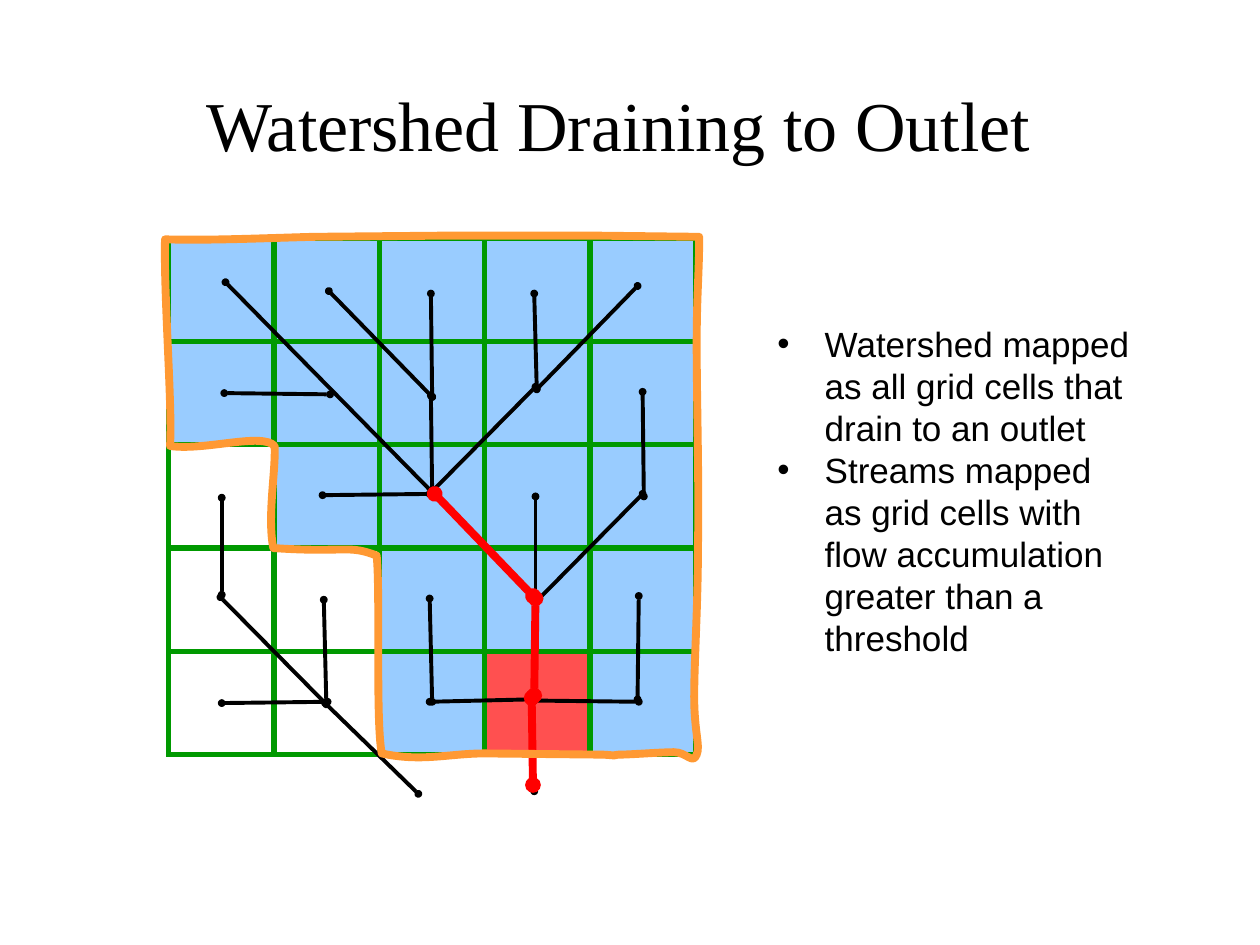
import pptx
import pptx.dml.color
import pptx.enum.shapes
import pptx.enum.text
import pptx.oxml
import pptx.oxml.ns
import pptx.util

Inches = pptx.util.Inches
Pt = pptx.util.Pt
RGBColor = pptx.dml.color.RGBColor

BLACK = RGBColor(0x00, 0x00, 0x00)
RED = RGBColor(0xFF, 0x00, 0x00)
GREEN = RGBColor(0x00, 0x99, 0x00)
ORANGE = RGBColor(0xFF, 0x99, 0x33)
WATERSHED_BLUE = RGBColor(0x99, 0xCC, 0xFF)
OUTLET_RED = RGBColor(0xFF, 0x50, 0x50)

# Grid map: W = watershed, O = outlet, . = outside
CELL_ROWS = ["WWWWW", "WWWWW", ".WWWW", "..WWW", "..WOW"]
CELL_FILLS = {"W": WATERSHED_BLUE, "O": OUTLET_RED, ".": None}
GRID_LEFT, GRID_TOP = 1.34, 1.89
GRID_WIDTH, GRID_HEIGHT = 4.18, 4.1
CELL_WIDTH = GRID_WIDTH / len(CELL_ROWS[0])
CELL_HEIGHT = GRID_HEIGHT / len(CELL_ROWS)

# Flow directions and mapped streams: x1, y1, x2, y2
FLOW_LINES = [
    (1.79, 2.24, 4.26, 4.75), (2.61, 2.31, 3.43, 3.15), (1.76, 3.95, 1.76, 4.72),
    (4.22, 5.56, 4.24, 6.28), (1.75, 4.74, 2.59, 5.59), (1.76, 5.58, 2.6, 5.57),
    (3.41, 5.57, 4.23, 5.55), (2.58, 5.58, 3.32, 6.3), (2.57, 4.76, 2.59, 5.57),
    (2.56, 3.93, 3.43, 3.92), (1.78, 3.12, 2.62, 3.13), (3.42, 2.33, 3.43, 3.15),
    (3.42, 3.14, 3.43, 3.91), (5.07, 4.73, 5.06, 5.55), (3.41, 4.75, 3.43, 5.57),
    (4.24, 2.33, 4.26, 3.08), (4.25, 3.94, 4.25, 4.74), (5.07, 5.57, 4.24, 5.56),
    (5.1, 3.11, 5.11, 3.94), (4.25, 3.07, 3.41, 3.92), (5.06, 2.27, 4.26, 3.09),
    (5.1, 3.92, 4.28, 4.75), (4.25, 4.75, 4.25, 5.55),
]
STREAM_LINES = [
    (4.22, 5.54, 4.23, 6.23), (4.25, 4.75, 4.24, 5.52), (3.45, 3.92, 4.23, 4.73),
]

# Watershed boundary: one point is a straight side, three points a Bezier curve
BOUNDARY_START = (4.79, 5.99)
BOUNDARY_SIDES = [
    [(3.85, 5.98)],
    [(3.56, 5.98), (3.35, 6.05), (3.03, 5.98)],
    [(2.98, 5.71), (3.02, 4.71), (2.99, 4.41)],
    [(2.76, 4.32), (2.75, 4.39), (2.17, 4.35)],
    [(2.12, 4.1), (2.19, 3.74), (2.18, 3.54)],
    [(2.08, 3.43), (1.63, 3.58), (1.35, 3.54)],
    [(1.37, 3.24), (1.3, 2.36), (1.31, 1.9)],
    [(1.68, 1.91), (2.11, 1.89), (2.49, 1.88)],
    [(3.57, 1.87)],
    [(4.7, 1.87)],
    [(5.55, 1.88)],
    [(5.55, 2.17), (5.53, 2.33), (5.53, 2.74)],
    [(5.53, 3.15), (5.55, 3.87), (5.54, 4.34)],
    [(5.54, 4.8), (5.51, 5.25), (5.51, 5.53)],
    [(5.51, 5.81), (5.56, 5.92), (5.53, 5.99)],
    [(5.5, 6.07), (5.45, 5.97), (5.35, 5.97)],
    [(5.25, 5.97), (5, 5.99), (4.91, 5.99)],
    [(4.81, 6), (4.96, 6), (4.79, 5.99)],
]

BULLETS = [
    "Watershed mapped as all grid cells that drain to an outlet",
    "Streams mapped as grid cells with flow accumulation greater than a threshold",
]


def make_element(tag, attributes=""):
    return pptx.oxml.parse_xml(f'<{tag} {pptx.oxml.ns.nsdecls("a")} {attributes}/>')


def place(shape, left, top, width, height):
    shape.left, shape.top = Inches(left), Inches(top)
    shape.width, shape.height = Inches(width), Inches(height)


def format_runs(paragraph, font_name, size):
    for run in paragraph.runs:
        run.font.name = font_name
        run.font.size = Pt(size)
        run.font.color.rgb = BLACK


def set_title(slide, text):
    title = slide.shapes.title
    place(title, 1.54, 0.6, 6.79, 0.77)
    text_frame = title.text_frame
    text_frame.text = text
    text_frame.word_wrap = False
    text_frame.auto_size = pptx.enum.text.MSO_AUTO_SIZE.SHAPE_TO_FIT_TEXT
    text_frame.vertical_anchor = pptx.enum.text.MSO_ANCHOR.TOP
    text_frame.paragraphs[0].alignment = pptx.enum.text.PP_ALIGN.LEFT
    format_runs(text_frame.paragraphs[0], "Times New Roman", 40)


def set_bullets(slide, items):
    body = slide.placeholders[1]
    place(body, 6.07, 2.51, 3.04, 2.79)
    text_frame = body.text_frame
    text_frame.text = "\n".join(items)
    text_frame.word_wrap = True
    text_frame.auto_size = pptx.enum.text.MSO_AUTO_SIZE.SHAPE_TO_FIT_TEXT
    for paragraph in text_frame.paragraphs:
        paragraph.space_before = Pt(0)
        paragraph.line_spacing = Pt(24)
        properties = paragraph._p.get_or_add_pPr()
        properties.set("marL", str(Pt(27)))
        properties.set("indent", str(Pt(-27)))
        format_runs(paragraph, "Arial", 20)


def add_cell(slide, row, column, fill):
    cell = slide.shapes.add_shape(
        pptx.enum.shapes.MSO_SHAPE.RECTANGLE,
        Inches(GRID_LEFT + column * CELL_WIDTH), Inches(GRID_TOP + row * CELL_HEIGHT),
        Inches(CELL_WIDTH), Inches(CELL_HEIGHT))
    cell.shadow.inherit = False
    if fill is None:
        cell.fill.background()
    else:
        cell.fill.solid()
        cell.fill.fore_color.rgb = fill
    cell.line.color.rgb = GREEN
    cell.line.width = Pt(3)
    cell.line._get_or_add_ln().append(make_element("a:miter", 'lim="800000"'))


def add_dotted_end_line(slide, ends, color, width):
    connector = slide.shapes.add_connector(
        pptx.enum.shapes.MSO_CONNECTOR.STRAIGHT, *[Inches(value) for value in ends])
    connector.line.color.rgb = color
    connector.line.width = Pt(width)
    for tag in ("a:headEnd", "a:tailEnd"):
        connector.line._get_or_add_ln().append(
            make_element(tag, 'type="oval" w="sm" len="sm"'))
    connector._element.spPr.append(make_element("a:effectLst"))


def add_boundary(slide):
    points = [point for side in BOUNDARY_SIDES for point in side]
    builder = slide.shapes.build_freeform(*[Inches(value) for value in BOUNDARY_START])
    builder.add_line_segments([(Inches(x), Inches(y)) for x, y in points], close=True)
    boundary = builder.convert_to_shape()

    # Merge each group of three segments into one Bezier curve
    segments = iter(boundary._element.findall(".//" + pptx.oxml.ns.qn("a:lnTo")))
    for side in BOUNDARY_SIDES:
        group = [next(segments) for _ in side]
        if len(group) == 3:
            curve = make_element("a:cubicBezTo")
            group[0].addprevious(curve)
            for segment in group:
                curve.append(segment[0])
                segment.getparent().remove(segment)

    boundary.shadow.inherit = False
    boundary.fill.background()
    boundary.line.color.rgb = ORANGE
    boundary.line.width = Pt(4.5)


def main():
    presentation = pptx.Presentation()
    presentation.slide_width, presentation.slide_height = Inches(10), Inches(7.5)
    slide = presentation.slides.add_slide(presentation.slide_layouts[1])

    # Text
    set_title(slide, "Watershed Draining to Outlet")
    set_bullets(slide, BULLETS)

    # Grid cells
    for row, cells in enumerate(CELL_ROWS):
        for column, kind in enumerate(cells):
            add_cell(slide, row, column, CELL_FILLS[kind])

    # Drainage network
    for ends in FLOW_LINES:
        add_dotted_end_line(slide, ends, BLACK, 2.25)
    for ends in STREAM_LINES:
        add_dotted_end_line(slide, ends, RED, 4.5)

    # Watershed outline
    add_boundary(slide)

    presentation.save("out.pptx")


if __name__ == "__main__":
    main()
